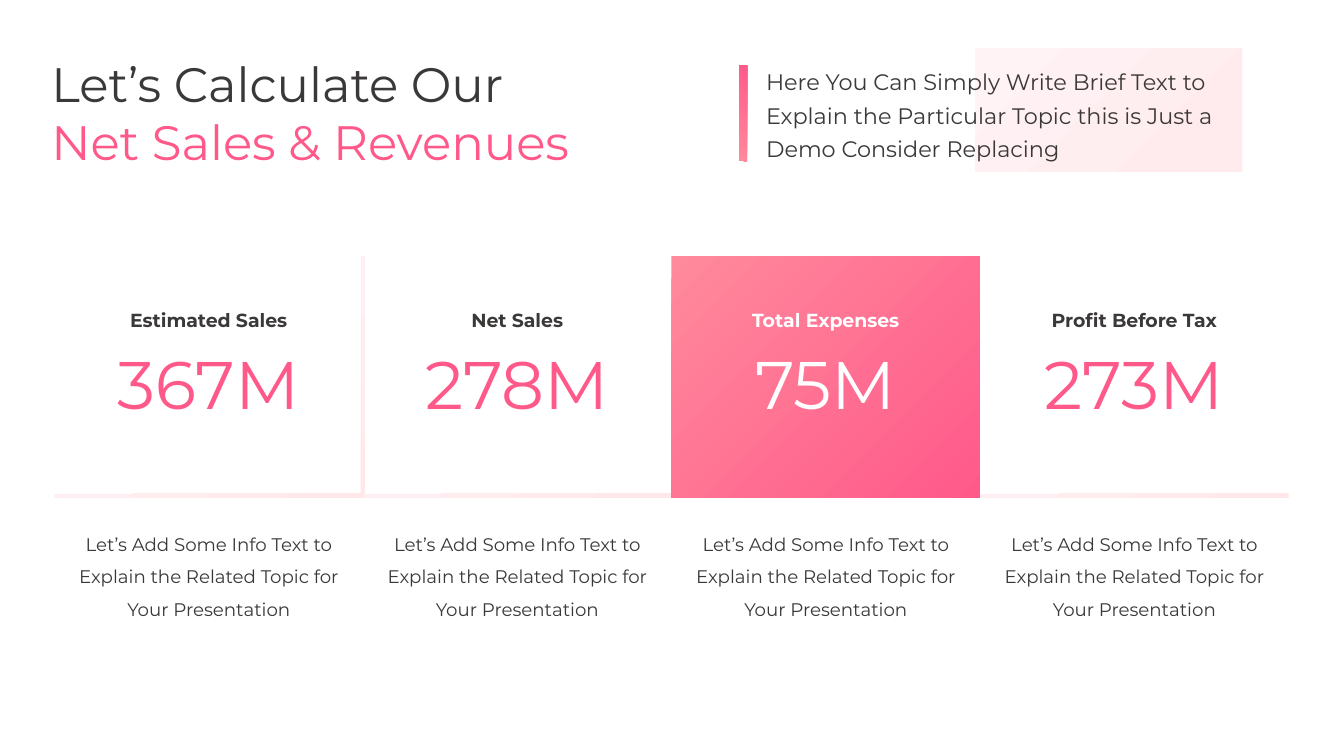
from lxml import etree
from pptx import Presentation
from pptx import util as u
from pptx.dml.color import RGBColor
from pptx.enum import shapes, text
from pptx.oxml.ns import qn

COLORS = {
    "dark": "3B3838", "pink": "FF598A", "coral": "FF8A9C", "white": "FFFFFF",
    "rule": "FFE7EA", "rule_light": "FFEFF2",
    "blush": "FFEBEE", "blush_light": "FFF3F5",
}
FONT = "Montserrat"
LEFT, COLUMN_WIDTH = 0.54, 3.06
CARD_TOP, CARD_HEIGHT, RULE = 2.54, 2.4, 0.04
INFO = ["Let’s Add Some Info Text to", "Explain the Related Topic for",
        "Your Presentation"]
COLUMNS = [("Estimated Sales", "367M"), ("Net Sales", "278M"),
           ("Total Expenses", "75M"), ("Profit Before Tax", "273M")]
HIGHLIGHT = 2


class SlideBuilder:
    def __init__(self, presentation):
        self.slide = presentation.slides.add_slide(presentation.slide_layouts[5])

    def gradient_box(self, box, start, end, focus=("l", "t"), offset=0):
        """Rectangle with a radial gradient that spreads from one corner."""
        shape = self.slide.shapes.add_shape(
            shapes.MSO_SHAPE.RECTANGLE, *map(u.Inches, box))
        shape.shadow.inherit = False
        shape.line.fill.background()
        shape.fill.gradient()
        for stop, color, position in zip(shape.fill.gradient_stops,
                                         (start, end), (offset, 1)):
            stop.color.rgb = RGBColor.from_string(COLORS[color])
            stop.position = position
        gradient = shape._element.spPr.find(qn("a:gradFill"))
        linear = gradient.find(qn("a:lin"))
        radial = etree.Element(qn("a:path"), {"path": "circle"})
        etree.SubElement(radial, qn("a:fillToRect"),
                         {side: "100000" for side in focus})
        gradient.replace(linear, radial)

    def fill_text(self, shape, box, lines, size, colors, bold=False,
                  **paragraph_format):
        """Place a shape and fill it with one paragraph per line."""
        for name, length in zip(("left", "top", "width", "height"), box):
            setattr(shape, name, u.Inches(length))
        frame = shape.text_frame
        frame_format = {"word_wrap": True, "auto_size": text.MSO_AUTO_SIZE.NONE,
                        "vertical_anchor": text.MSO_ANCHOR.TOP}
        for name, value in frame_format.items():
            setattr(frame, name, value)
        for index, line in enumerate(lines):
            paragraph = frame.paragraphs[0] if index == 0 else frame.add_paragraph()
            for name, value in paragraph_format.items():
                setattr(paragraph, name, value)
            run = paragraph.add_run()
            run.text = line
            font_format = {"name": FONT, "size": u.Pt(size), "bold": bold}
            for name, value in font_format.items():
                setattr(run.font, name, value)
            color = colors[index % len(colors)]
            run.font.color.rgb = RGBColor.from_string(COLORS[color])

    def title(self, box, lines, size, colors):
        self.fill_text(self.slide.shapes.title, box, lines, size, colors,
                       alignment=text.PP_ALIGN.LEFT)

    def text_box(self, box, lines, size, color, **options):
        shape = self.slide.shapes.add_textbox(*map(u.Inches, box))
        self.fill_text(shape, box, lines, size, [color], **options)


def main():
    presentation = Presentation()
    presentation.slide_width = u.Inches(13.33)
    presentation.slide_height = u.Inches(7.5)
    builder = SlideBuilder(presentation)

    # Title and introduction
    builder.title((0.41, 0.49, 5.77, 1.26),
                  ["Let’s Calculate Our", "Net Sales & Revenues"],
                  34.5, ["dark", "pink"])
    builder.gradient_box((9.67, 0.48, 2.65, 1.22), "blush", "blush_light", offset=0.1)
    builder.gradient_box((7.33, 0.65, 0.08, 0.95), "pink", "coral", focus=("l", "b"))
    builder.text_box((7.5, 0.56, 4.9, 1.08),
                     ["Here You Can Simply Write Brief Text to",
                      "Explain the Particular Topic this is Just a",
                      "Demo Consider Replacing"],
                     16, "dark", line_spacing=u.Pt(24))

    # Divider between the first two columns
    builder.gradient_box((LEFT + COLUMN_WIDTH - RULE / 2, CARD_TOP, RULE, CARD_HEIGHT),
                         "rule", "rule_light")

    # Columns: card or rule, heading, figure and info text
    centered = {"alignment": text.PP_ALIGN.CENTER}
    for index, (heading, figure) in enumerate(COLUMNS):
        left = LEFT + index * COLUMN_WIDTH
        highlighted = index == HIGHLIGHT
        if highlighted:
            builder.gradient_box((left, CARD_TOP, COLUMN_WIDTH, CARD_HEIGHT),
                                 "pink", "coral")
        else:
            builder.gradient_box((left, CARD_TOP + CARD_HEIGHT - RULE,
                                  COLUMN_WIDTH, RULE), "rule", "rule_light")
        builder.text_box((left, 3.01, COLUMN_WIDTH, 0.33), [heading], 13.5,
                         "white" if highlighted else "dark", bold=True, **centered)
        builder.text_box((left, 3.35, COLUMN_WIDTH, 0.91), [figure], 48,
                         "white" if highlighted else "pink", **centered)
        builder.text_box((left, 5.13, COLUMN_WIDTH, 1.05), INFO, 13, "dark",
                         line_spacing=1.5, **centered)

    presentation.save("out.pptx")


if __name__ == "__main__":
    main()
